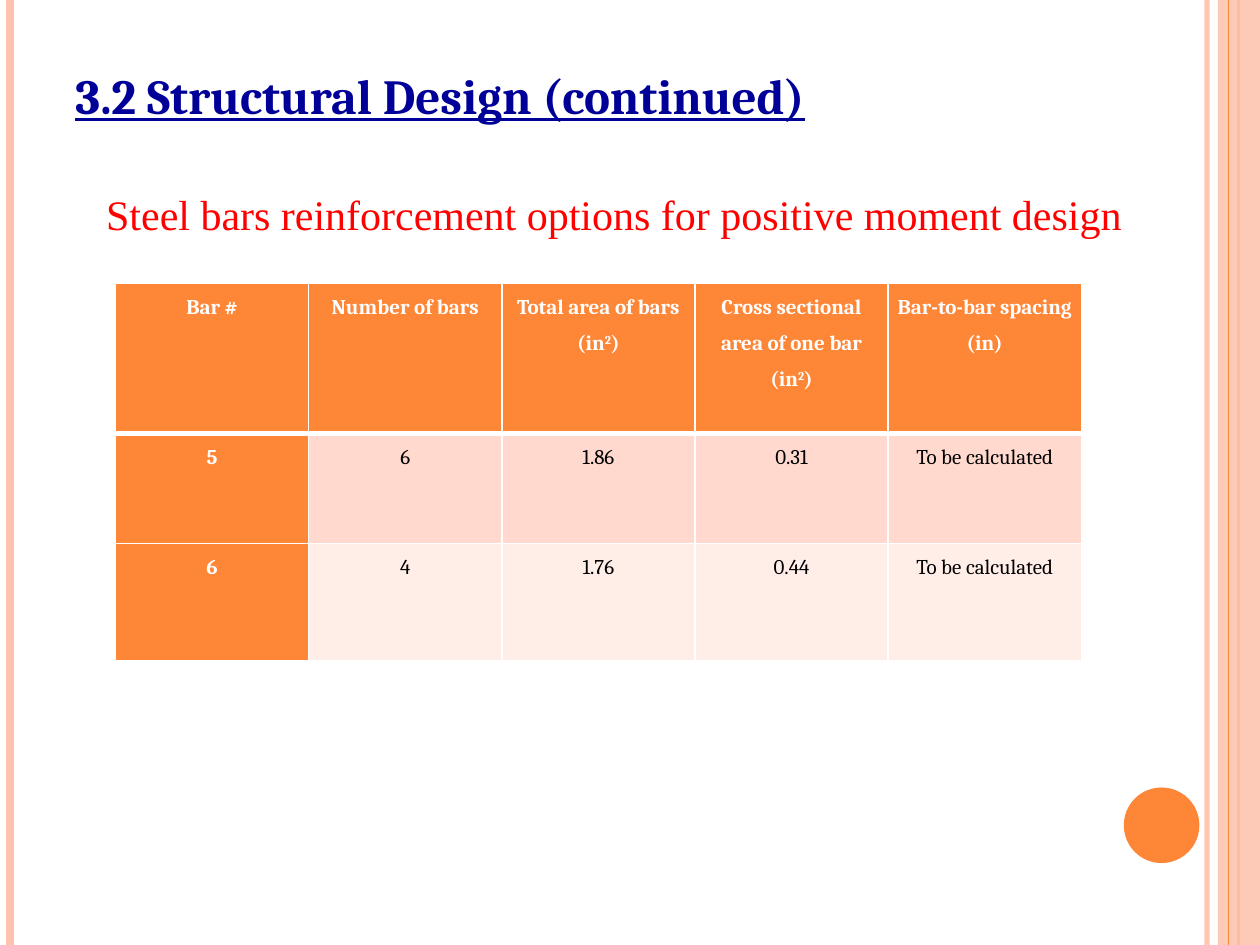
from lxml import etree
from pptx import Presentation
from pptx.dml.color import RGBColor as RGB
from pptx.enum.shapes import MSO_CONNECTOR as CONN, MSO_SHAPE as SHAPE
from pptx.enum.text import MSO_ANCHOR as ANCHOR, PP_ALIGN as ALIGN
from pptx.oxml import parse_xml
from pptx.oxml.ns import nsdecls, qn
from pptx.util import Pt

COLORS = {
    "orange": "FE8637", "peach": "FEC3AE", "white": "FFFFFF", "black": "000000",
    "navy": "000099", "red": "FF0000", "band_dark": "FFD9CE", "band_light": "FFEDE8",
}
W, H = 720, 540


def write(tf, text, size, color, font="Cambria", bold=False, underline=False,
          align=ALIGN.LEFT, spacing=1.0, after=0, margins=(7.2, 3.6, 7.2, 3.6)):
    """Fill a text frame or cell; text between ^ marks is superscript."""
    tf.margin_left, tf.margin_top, tf.margin_right, tf.margin_bottom = map(Pt, margins)
    p = getattr(tf, "text_frame", tf).paragraphs[0]
    p.alignment, p.line_spacing, p.space_after = align, spacing, Pt(after)
    for i, part in enumerate(text.split("^")):
        r = p.add_run()
        r.text = part
        r.font.name, r.font.size = font, Pt(size)
        r.font.bold, r.font.underline = bold, underline
        r.font.color.rgb = RGB.from_string(COLORS[color])
        if i % 2:
            r.font._element.set("baseline", "30000")


def set_alpha(fill_parent, percent):
    clr = next(fill_parent.iter(qn("a:srgbClr")))
    etree.SubElement(clr, qn("a:alpha")).set("val", str(percent * 1000))


prs = Presentation()
prs.slide_width, prs.slide_height = Pt(W), Pt(H)
s = prs.slides.add_slide(prs.slide_layouts[6])

# Side stripes: (x, colour, width, opacity); the band lies between the last two
stripes = [(689.8, "peach", 3, 93), (5.8, "peach", 4.5, 100),
           (707.8, "orange", 1.5, 100), (702, "orange", 0.75, 100)]
for i, (x, color, width, opacity) in enumerate(stripes):
    if i == 3:
        band = s.shapes.add_shape(SHAPE.RECTANGLE, Pt(696), 0, Pt(24), Pt(H))
        band.shadow.inherit = False
        band.fill.solid()
        band.fill.fore_color.rgb = RGB.from_string(COLORS["peach"])
        band.line.fill.background()
        set_alpha(band._element.spPr, 87)
    line = s.shapes.add_connector(CONN.STRAIGHT, Pt(x), 0, Pt(x), Pt(H))
    line.line.color.rgb = RGB.from_string(COLORS[color])
    line.line.width = Pt(width)
    if opacity < 100:
        set_alpha(line._element.spPr, opacity)
    etree.SubElement(line._element.spPr, qn("a:effectLst"))

dot = s.shapes.add_shape(SHAPE.OVAL, Pt(642.2), Pt(450), Pt(43.2), Pt(43.2))
dot.shadow.inherit = False
dot.fill.solid()
dot.fill.fore_color.rgb = RGB.from_string(COLORS["orange"])
dot.line.fill.background()

# Title and subtitle
title = s.shapes.add_textbox(Pt(36), Pt(21.6), Pt(588), Pt(86.4)).text_frame
title.word_wrap = True
title.vertical_anchor = ANCHOR.BOTTOM
write(title, "3.2 Structural Design (continued)", 28, "navy", bold=True,
      underline=True, margins=(7.2, 3.6, 7.2, 37))

body = s.shapes.add_textbox(Pt(24), Pt(90), Pt(653.8), Pt(420)).text_frame
body.word_wrap = True
write(body, "Steel bars reinforcement options for positive moment design", 24, "red",
      font="Times New Roman", align=ALIGN.CENTER, spacing=1.5, after=10)

# Reinforcement table
rows = [
    ["Bar #", "Number of bars", "Total area of bars (in^2^)",
     "Cross sectional area of one bar (in^2^)", "Bar-to-bar spacing (in)"],
    ["5", "6", "1.86", "0.31", "To be calculated"],
    ["6", "4", "1.76", "0.44", "To be calculated"],
]
row_heights = [85.7, 62.9, 67]
row_fills = ["orange", "band_dark", "band_light"]
col_width = 110.4
table = s.shapes.add_table(len(rows), len(rows[0]), Pt(66), Pt(162),
                           Pt(col_width * len(rows[0])), Pt(sum(row_heights))).table
for col in table.columns:
    col.width = Pt(col_width)
for i, texts in enumerate(rows):
    table.rows[i].height = Pt(row_heights[i])
    for j, text in enumerate(texts):
        cell = table.cell(i, j)
        heading = i == 0 or j == 0
        write(cell, text, 12, "white" if heading else "black", bold=heading,
              align=ALIGN.CENTER, spacing=1.5, margins=(5, 0, 5, 0))
        cell.fill.solid()
        cell.fill.fore_color.rgb = RGB.from_string(COLORS["orange" if heading else row_fills[i]])
        borders = {"L": 1, "R": 1, "T": 3 if i == 1 else 1, "B": 3 if i == 0 else 1}
        for k, (side, width) in enumerate(borders.items()):
            cell._tc.tcPr.insert(k, parse_xml(
                f'<a:ln{side} {nsdecls("a")} w="{Pt(width)}"><a:solidFill>'
                f'<a:srgbClr val="{COLORS["white"]}"/></a:solidFill></a:ln{side}>'))

prs.save("out.pptx")
